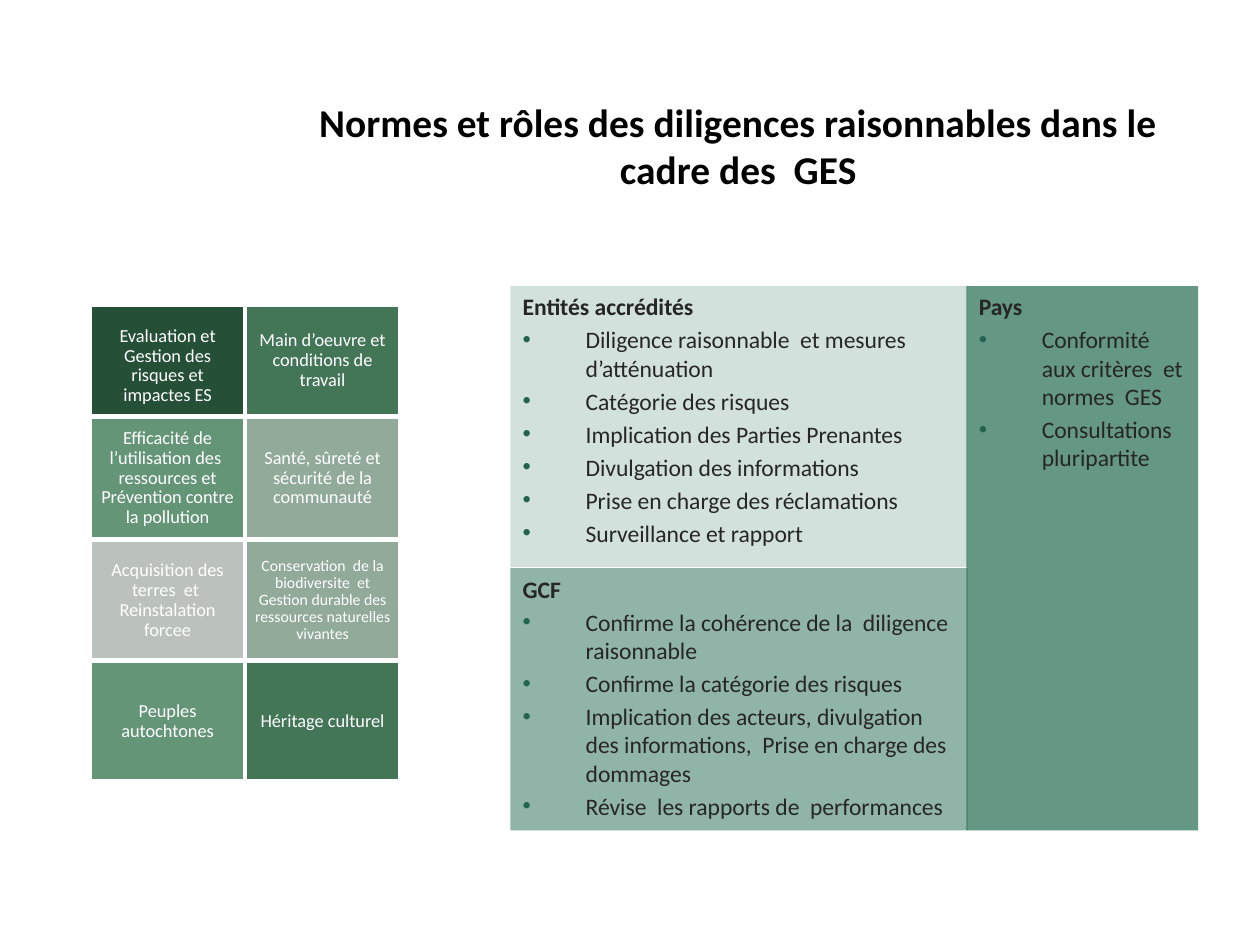
import pptx
import pptx.util
import pptx.dml.color
import pptx.enum.shapes
import pptx.enum.text
import pptx.oxml.ns
import lxml.etree

Inches = pptx.util.Inches
Pt = pptx.util.Pt
RGBColor = pptx.dml.color.RGBColor
PP_ALIGN = pptx.enum.text.PP_ALIGN
MSO_ANCHOR = pptx.enum.text.MSO_ANCHOR
qn = pptx.oxml.ns.qn

BLACK = RGBColor(0x00, 0x00, 0x00)
WHITE = RGBColor(0xFF, 0xFF, 0xFF)
INK = RGBColor(0x26, 0x26, 0x26)
BULLET = RGBColor(0x24, 0x63, 0x4F)
PANEL = RGBColor(0x24, 0x6B, 0x52)
FOREST = RGBColor(0x26, 0x4F, 0x38)
GREEN = RGBColor(0x43, 0x75, 0x57)
SAGE = RGBColor(0x64, 0x95, 0x77)
MIST = RGBColor(0x91, 0xAA, 0x9A)
GREY = RGBColor(0xBB, 0xC2, 0xBD)

ROLES = [
    ("GCF", 4.05, 4.51, 3.63, 2.08, 50, [
        "Confirme la cohérence de la  diligence raisonnable",
        "Confirme la catégorie des risques",
        "Implication des acteurs, divulgation des informations,  Prise en charge des dommages",
        "Révise  les rapports de  performances",
    ]),
    ("Entités accrédités", 4.05, 2.27, 3.63, 2.23, 20, [
        "Diligence raisonnable  et mesures d’atténuation",
        "Catégorie des risques",
        "Implication des Parties Prenantes",
        "Divulgation des informations",
        "Prise en charge des réclamations",
        "Surveillance et rapport",
    ]),
    ("Pays", 7.67, 2.27, 1.84, 4.32, 70, [
        "Conformité aux critères  et normes  GES",
        "Consultations pluripartite",
    ]),
]

STANDARD_COLUMNS = (0.72, 1.95)
STANDARD_WIDTH = 1.22
STANDARD_ROWS = [
    (2.42, 0.88, [
        ("Evaluation et Gestion des risques et impactes ES", FOREST, 10.5, 0.15),
        ("Main d’oeuvre et conditions de travail", GREEN, 10.5, 0.06),
    ]),
    (3.31, 0.97, [
        ("Efficacité de l’utilisation des  ressources et Prévention contre la pollution",
         SAGE, 10.5, 0.06),
        ("Santé, sûreté et sécurité de la communauté", MIST, 10.5, 0.06),
    ]),
    (4.29, 0.95, [
        ("Acquisition des terres  et  Reinstalation forcee", GREY, 10.5, 0.06),
        ("Conservation  de la biodiversite  et Gestion durable des ressources "
         "naturelles vivantes", MIST, 9, 0.06),
    ]),
    (5.25, 0.95, [
        ("Peuples autochtones", SAGE, 10.5, 0.06),
        ("Héritage culturel", GREEN, 10.5, 0.06),
    ]),
]


class SlideBuilder:
    font_name = "Calibri"
    role_size = 13.5
    cell_inset = Inches(0.06)

    def __init__(self, slide):
        self.slide = slide

    def run(self, paragraph, text, size, color, bold=False):
        run = paragraph.add_run()
        run.text = text
        run.font.name = self.font_name
        run.font.size = Pt(size)
        run.font.bold = bold
        run.font.color.rgb = color

    def title(self, text, left, top, width, height):
        title = self.slide.shapes.title
        title.left, title.top = Inches(left), Inches(top)
        title.width, title.height = Inches(width), Inches(height)
        frame = title.text_frame
        frame.word_wrap = True
        frame.auto_size = pptx.enum.text.MSO_AUTO_SIZE.NONE
        frame.vertical_anchor = MSO_ANCHOR.MIDDLE
        heading = frame.paragraphs[0]
        heading.alignment = PP_ALIGN.CENTER
        self.run(heading, text, 22.5, BLACK, bold=True)

    def rectangle(self, left, top, width, height, color):
        rectangle = self.slide.shapes.add_shape(
            pptx.enum.shapes.MSO_SHAPE.RECTANGLE,
            Inches(left), Inches(top), Inches(width), Inches(height))
        rectangle.shadow.inherit = False
        rectangle.fill.solid()
        rectangle.fill.fore_color.rgb = color
        rectangle.text_frame.word_wrap = True
        return rectangle

    def opacity(self, rectangle, percent):
        color = rectangle.fill._xPr.find(qn("a:solidFill"))[0]
        lxml.etree.SubElement(color, qn("a:alpha"), val=str(percent * 1000))

    def bullet(self, paragraph):
        properties = paragraph._p.get_or_add_pPr()
        properties.set("marL", str(Inches(0.5)))
        properties.set("indent", str(-Inches(0.5)))
        color = lxml.etree.SubElement(properties, qn("a:buClr"))
        lxml.etree.SubElement(color, qn("a:srgbClr"), val=str(BULLET))
        lxml.etree.SubElement(properties, qn("a:buFont"), typeface="Arial")
        lxml.etree.SubElement(properties, qn("a:buChar"), char="•")

    def role(self, name, left, top, width, height, opacity, duties):
        panel = self.rectangle(left, top, width, height, PANEL)
        self.opacity(panel, opacity)
        panel.line.fill.background()
        frame = panel.text_frame
        frame.vertical_anchor = MSO_ANCHOR.TOP
        heading = frame.paragraphs[0]
        heading.alignment = PP_ALIGN.LEFT
        self.run(heading, name, self.role_size, INK, bold=True)
        for duty in duties:
            item = frame.add_paragraph()
            self.bullet(item)
            item.alignment = PP_ALIGN.LEFT
            item.space_before = Pt(2.7)
            self.run(item, duty, self.role_size, INK)

    def standard(self, text, left, top, width, height, color, size, top_inset):
        cell = self.rectangle(left, top, width, height, color)
        cell.line.color.rgb = WHITE
        cell.line.width = Pt(2)
        frame = cell.text_frame
        frame.vertical_anchor = MSO_ANCHOR.MIDDLE
        frame.margin_left = frame.margin_right = frame.margin_bottom = self.cell_inset
        frame.margin_top = Inches(top_inset)
        label = frame.paragraphs[0]
        label.alignment = PP_ALIGN.CENTER
        label.line_spacing = 0.9
        self.run(label, text, size, WHITE)


def main():
    deck = pptx.Presentation()
    deck.slide_width = Inches(10)
    deck.slide_height = Inches(7.5)
    builder = SlideBuilder(deck.slides.add_slide(deck.slide_layouts[5]))
    builder.title("Normes et rôles des diligences raisonnables dans le cadre des  GES",
                  2.27, 0.68, 7.18, 0.95)
    for role in ROLES:
        builder.role(*role)
    for top, height, standards in STANDARD_ROWS:
        for left, (text, color, size, top_inset) in zip(STANDARD_COLUMNS, standards):
            builder.standard(text, left, top, STANDARD_WIDTH, height,
                             color, size, top_inset)
    deck.save("out.pptx")


if __name__ == "__main__":
    main()
